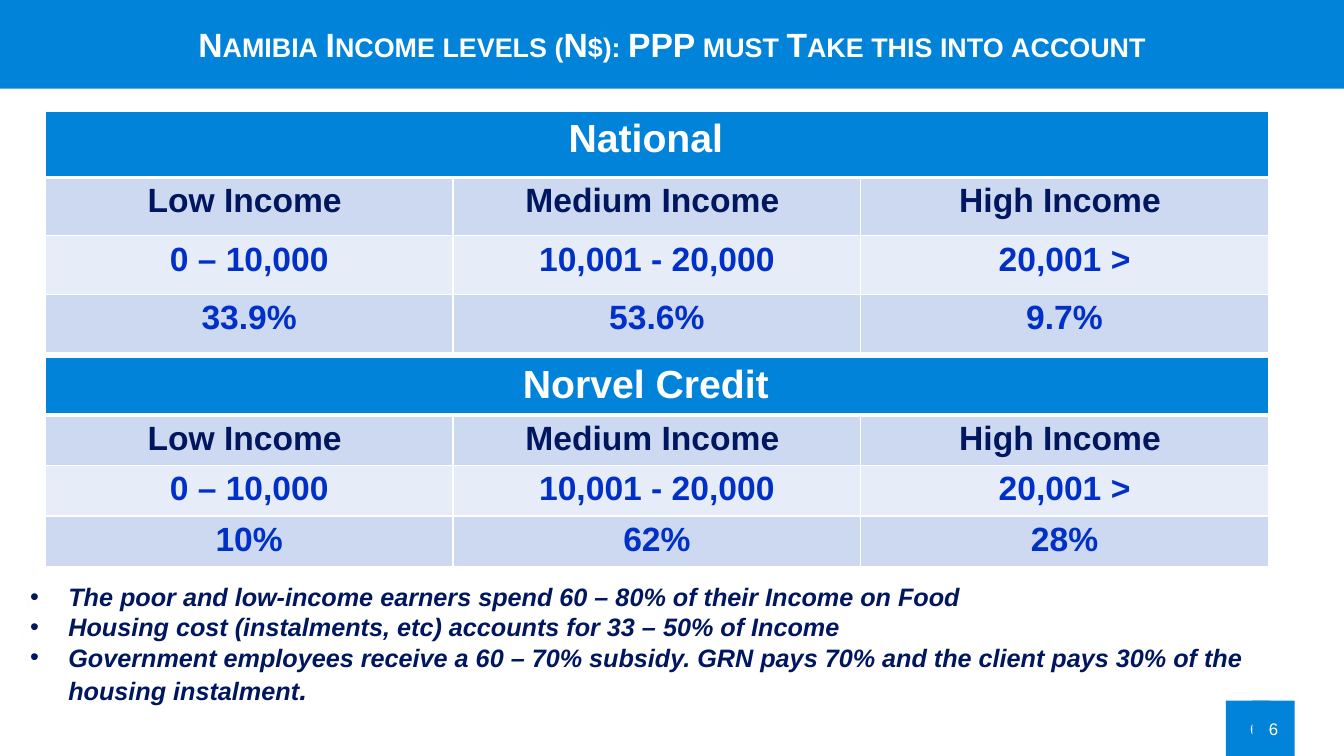
from lxml import etree
from pptx import Presentation
from pptx.dml.color import RGBColor
from pptx.enum.shapes import MSO_SHAPE
from pptx.enum.text import MSO_ANCHOR, MSO_AUTO_SIZE, PP_ALIGN
from pptx.oxml.ns import qn
from pptx.util import Inches, Pt

RECTANGLE = MSO_SHAPE.RECTANGLE
MIDDLE = MSO_ANCHOR.MIDDLE
NO_AUTOFIT = MSO_AUTO_SIZE.NONE
CENTER, RIGHT = PP_ALIGN.CENTER, PP_ALIGN.RIGHT

COLORS = {
    "banner": "0083D8",
    "white": "FFFFFF",
    "navy": "001760",
    "figure": "0030C8",
    "band_dark": "CCD9F0",
    "band_light": "E7EDF8",
}


def set_font(font, size, color, bold=False, italic=False):
    font.name = "Arial"
    font.size = Pt(size)
    font.bold = bold
    font.italic = italic
    font.color.rgb = RGBColor.from_string(COLORS[color])


def add_border(cell, side, points):
    line = etree.SubElement(cell._tc.get_or_add_tcPr(), qn(f"a:ln{side}"), w=str(Pt(points)))
    fill = etree.SubElement(line, qn("a:solidFill"))
    etree.SubElement(fill, qn("a:srgbClr"), val=COLORS["white"])


prs = Presentation()
prs.slide_width = Inches(13.33)
prs.slide_height = Inches(7.5)
slide = prs.slides.add_slide(prs.slide_layouts[5])

# Title banner
title = slide.shapes.title
title.left, title.top = Inches(0), Inches(-0.01)
title.width, title.height = Inches(13.33), Inches(0.89)
title.fill.solid()
title.fill.fore_color.rgb = RGBColor.from_string(COLORS["banner"])
title.text_frame.text = "Namibia Income levels (N$): PPP must Take this into account"
title.text_frame.auto_size = NO_AUTOFIT
title.text_frame.vertical_anchor = MIDDLE
heading = title.text_frame.paragraphs[0]
heading.alignment = CENTER
set_font(heading.font, 24, "white", bold=True)
heading.font._element.set("cap", "small")

# Overlapping page number boxes
for left, width, alignment in [(12.16, 0.43, RIGHT), (12.42, 0.42, CENTER)]:
    page_box = slide.shapes.add_shape(
        RECTANGLE, Inches(left), Inches(6.95), Inches(width), Inches(0.55))
    page_box.shadow.inherit = False
    page_box.fill.solid()
    page_box.fill.fore_color.rgb = RGBColor.from_string(COLORS["banner"])
    page_box.line.fill.background()
    page_box.text_frame.text = "6"
    page_box.text_frame.vertical_anchor = MIDDLE
    page_number = page_box.text_frame.paragraphs[0]
    page_number.alignment = alignment
    set_font(page_number.font, 12, "white")

# Findings below the tables
findings = [
    "The poor and low-income earners spend 60 – 80% of their Income on Food",
    "Housing cost (instalments, etc) accounts for 33 – 50% of Income",
    "Government employees receive a 60 – 70% subsidy. GRN pays 70% and the client "
    "pays 30% of the housing instalment",
]
findings_box = slide.shapes.add_textbox(Inches(0.2), Inches(5.72), Inches(13.14), Inches(1.35))
findings_frame = findings_box.text_frame
findings_frame.word_wrap = True
for index, finding in enumerate(findings):
    bullet = findings_frame.paragraphs[0] if index == 0 else findings_frame.add_paragraph()
    bullet.add_run().text = finding
    properties = bullet._p.get_or_add_pPr()
    properties.set("marL", str(Inches(0.38)))
    properties.set("indent", str(Inches(-0.38)))
    etree.SubElement(properties, qn("a:buFont"), typeface="Arial")
    etree.SubElement(properties, qn("a:buChar"), char="•")
    set_font(bullet.font, 18, "navy", bold=True, italic=True)
full_stop = bullet.add_run()
full_stop.text = "."
full_stop.font.size = Pt(20)

# Income tables
income_levels = ["Low Income", "Medium Income", "High Income"]
income_ranges = ["0 – 10,000", "10,001 - 20,000", "20,001 >"]
income_tables = [
    ("National", ["33.9%", "53.6%", "9.7%"], 1.11, 0.65, 0.58),
    ("Norvel Credit", ["10%", "62%", "28%"], 3.55, 0.56, 0.5),
]
# Fill, text colour, text size, right margin of each row
row_styles = [
    ("banner", "white", 28, 0.32),
    ("band_dark", "navy", 24, 0.19),
    ("band_light", "figure", 24, 0.1),
    ("band_dark", "figure", 24, 0.1),
]
for group, shares, top, header_height, row_height in income_tables:
    rows = [[group, "", ""], income_levels, income_ranges, shares]
    table = slide.shapes.add_table(
        4, 3, Inches(0.45), Inches(top), Inches(12.13),
        Inches(header_height + 3 * row_height)).table
    for column in table.columns:
        column.width = Inches(12.13 / 3)
    for r, (texts, (fill, color, size, margin)) in enumerate(zip(rows, row_styles)):
        table.rows[r].height = Inches(row_height if r else header_height)
        for c, text in enumerate(texts):
            cell = table.cell(r, c)
            for side in "LRTB":
                below_header = (r, side) in [(0, "B"), (1, "T")]
                add_border(cell, side, 3 if below_header else 1)
            cell.fill.solid()
            cell.fill.fore_color.rgb = RGBColor.from_string(COLORS[fill])
            cell.margin_right = Inches(margin)
            cell.text = text
            entry = cell.text_frame.paragraphs[0]
            entry.alignment = CENTER
            set_font(entry.font, size, color, bold=True)
    table.cell(0, 0).merge(table.cell(0, 2))

prs.save("out.pptx")
